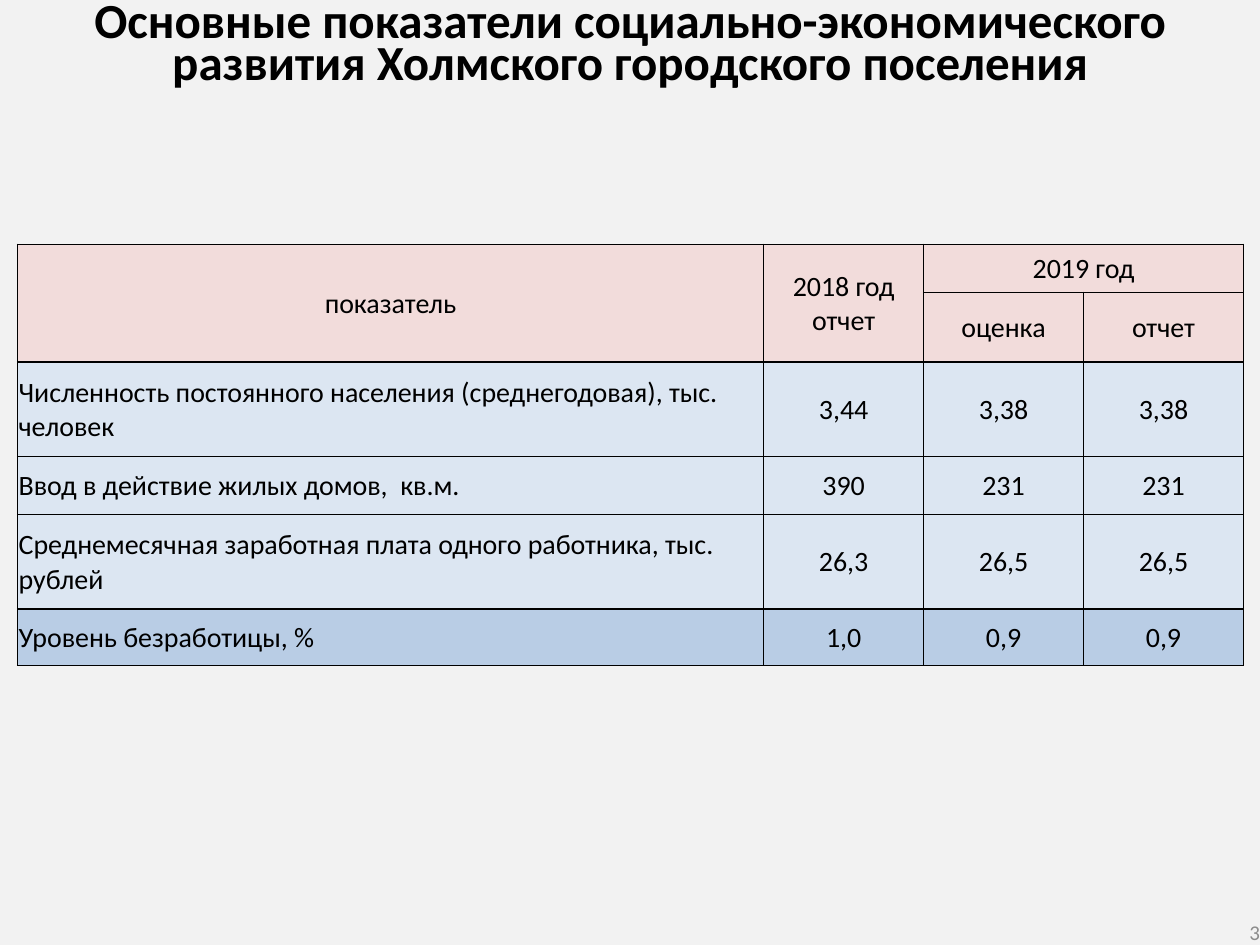
from lxml.etree import fromstring
from pptx import Presentation
from pptx.dml.color import RGBColor
from pptx.enum.text import MSO_ANCHOR as Anchor, PP_ALIGN as Align
from pptx.oxml import parse_xml
from pptx.oxml.ns import nsdecls
from pptx.util import Pt

COLORS = {
    "background": "F2F2F2",
    "text": "000000",
    "number": "8C8C8C",
    "header": "F2DCDB",
    "body": "DCE6F2",
    "last": "B9CDE5",
}
COL_WIDTHS = [426.4, 91.4, 91.4, 91.4]
ROW_HEIGHTS = [27.4, 38.2, 54, 33.1, 54, 32.4]
ROWS = [
    ["показатель", "2018 год отчет", "2019 год", ""],
    ["", "", "оценка", "отчет"],
    ["Численность постоянного населения (среднегодовая), тыс. человек", "3,44", "3,38", "3,38"],
    ["Ввод в действие жилых домов,  кв.м.", "390", "231", "231"],
    ["Среднемесячная заработная плата одного работника, тыс. рублей", "26,3", "26,5", "26,5"],
    ["Уровень безработицы, %", "1,0", "0,9", "0,9"],
]
ROW_FILLS = ["header"] * 2 + ["body"] * 3 + ["last"]


def set_font(p, size, color, bold=False):
    p.font.name = "Calibri"
    p.font.size = Pt(size)
    p.font.bold = bold
    p.font.color.rgb = RGBColor.from_string(COLORS[color])


def add_borders(cell):
    tc_pr = cell._tc.get_or_add_tcPr()
    for i, side in enumerate(("lnL", "lnR", "lnT", "lnB")):
        tc_pr.insert(i, parse_xml(
            f'<a:{side} {nsdecls("a")} w="12700"><a:solidFill>'
            f'<a:srgbClr val="{COLORS["text"]}"/></a:solidFill></a:{side}>'))


prs = Presentation()
prs.slide_width, prs.slide_height = Pt(720), Pt(540)
s = prs.slides.add_slide(prs.slide_layouts[5])
s.background.fill.solid()
s.background.fill.fore_color.rgb = RGBColor.from_string(COLORS["background"])

# Title with a soft text shadow
title = s.shapes.title
title.left, title.top, title.width, title.height = Pt(0), Pt(0), Pt(720), Pt(105.8)
tf = title.text_frame
tf.word_wrap = True
tf.vertical_anchor = Anchor.TOP
p = tf.paragraphs[0]
p.alignment = Align.CENTER
p.line_spacing = Pt(24)
r = p.add_run()
r.text = "Основные показатели социально-экономического развития Холмского городского поселения"
set_font(r, 28, "text", bold=True)
shadow = parse_xml(
    f'<a:effectLst {nsdecls("a")}><a:outerShdw blurRad="38100" dist="38100" dir="2700000" algn="tl">'
    '<a:srgbClr val="000000"><a:alpha val="43000"/></a:srgbClr></a:outerShdw></a:effectLst>')
r.font.fill._xPr.find("{*}solidFill").addnext(shadow)

# Table of indicators
table = s.shapes.add_table(len(ROWS), len(COL_WIDTHS), Pt(10), Pt(139.7),
                           Pt(sum(COL_WIDTHS)), Pt(sum(ROW_HEIGHTS))).table
for column, width in zip(table.columns, COL_WIDTHS):
    column.width = Pt(width)
for row, height in zip(table.rows, ROW_HEIGHTS):
    row.height = Pt(height)

for i, (texts, fill) in enumerate(zip(ROWS, ROW_FILLS)):
    for j, text in enumerate(texts):
        cell = table.cell(i, j)
        cell.fill.solid()
        cell.fill.fore_color.rgb = RGBColor.from_string(COLORS[fill])
        cell.margin_left = cell.margin_right = cell.margin_top = Pt(0.7)
        cell.margin_bottom = Pt(0)
        cell.vertical_anchor = Anchor.MIDDLE
        cell.text = text
        p = cell.text_frame.paragraphs[0]
        p.alignment = Align.LEFT if j == 0 and fill != "header" else Align.CENTER
        set_font(p, 16, "text")
        add_borders(cell)

for first, last in (((0, 0), (1, 0)), ((0, 1), (1, 1)), ((0, 2), (0, 3))):
    table.cell(*first).merge(table.cell(*last))

# Slide number
tf = s.shapes.add_textbox(Pt(552.2), Pt(524.9), Pt(167.8), Pt(15.1)).text_frame
tf.word_wrap = True
tf.margin_left = tf.margin_right = tf.margin_top = tf.margin_bottom = Pt(0)
tf.vertical_anchor = Anchor.MIDDLE
p = tf.paragraphs[0]
p.text = "3"
p.alignment = Align.RIGHT
set_font(p, 12, "number")

prs.save("out.pptx")
